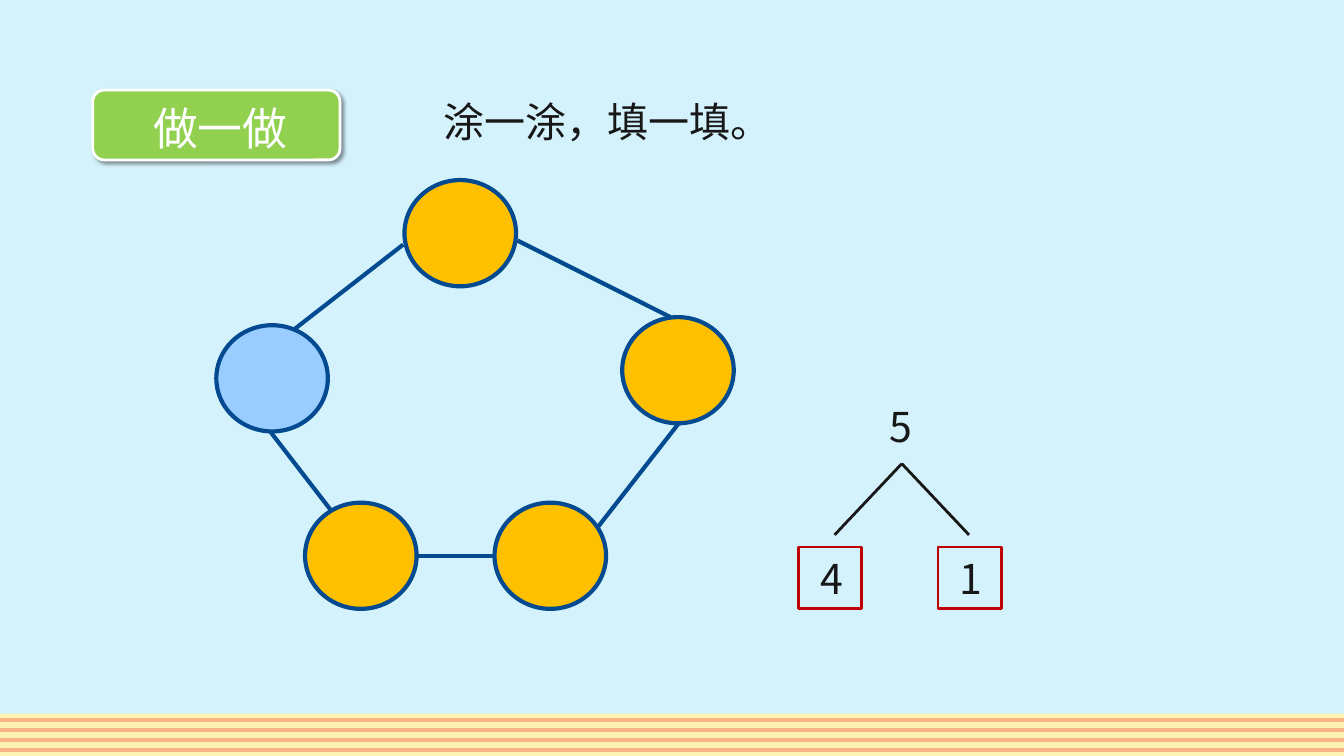
from typing import NamedTuple, Optional

from lxml.etree import SubElement
from pptx import Presentation
from pptx.dml.color import RGBColor
from pptx.enum.shapes import MSO_CONNECTOR, MSO_SHAPE
from pptx.enum.text import MSO_ANCHOR, PP_ALIGN
from pptx.oxml.ns import qn
from pptx.util import Inches, Pt

SKY = RGBColor(0xD4, 0xF2, 0xFC)
CREAM = RGBColor(0xFC, 0xF3, 0xB2)
PEACH = RGBColor(0xFB, 0xB4, 0x88)
NAVY = RGBColor(0x03, 0x4A, 0x90)
AMBER = RGBColor(0xFF, 0xC0, 0x00)
BLUE = RGBColor(0x99, 0xCC, 0xFF)
INK = RGBColor(0x18, 0x17, 0x17)
RED = RGBColor(0xC0, 0x00, 0x00)
GREEN = RGBColor(0x92, 0xD0, 0x50)
WHITE = RGBColor(0xFF, 0xFF, 0xFF)
FONT = "Noto Sans CJK SC"

prs = Presentation()
prs.slide_width = Inches(10)
prs.slide_height = prs.slide_width * 9 // 16
COLS = 100
ROWS = COLS * 9 / 16
CELL = prs.slide_width / COLS


class Box(NamedTuple):
    col: float
    row: float
    cols: float
    rows: float


class Line(NamedTuple):
    col1: float
    row1: float
    col2: float
    row2: float


class Bead(NamedTuple):
    col: float
    row: float
    fill: RGBColor = AMBER


class Digit(NamedTuple):
    text: str
    col: float
    row: float


def grid(*cells: float) -> list[int]:
    return [round(c * CELL) for c in cells]


def add_shape(slide, kind: MSO_SHAPE, box: Box, fill: Optional[RGBColor] = None,
              line: Optional[RGBColor] = None, width: float = 1.5):
    sp = slide.shapes.add_shape(kind, *grid(*box))
    sp.shadow.inherit = False
    if fill is None:
        sp.fill.background()
    else:
        sp.fill.solid()
        sp.fill.fore_color.rgb = fill
    if line is None:
        sp.line.fill.background()
    else:
        sp.line.color.rgb = line
        sp.line.width = Pt(width)
    return sp


def add_line(slide, line: Line, color: RGBColor, width: float) -> None:
    cxn = slide.shapes.add_connector(MSO_CONNECTOR.STRAIGHT, *grid(*line))
    cxn.line.color.rgb = color
    cxn.line.width = Pt(width)
    SubElement(cxn._element.spPr, qn("a:effectLst"))


def set_text(sp, text: str, size: float, color: RGBColor, wrap: bool = False,
             spacing: float = 1.0) -> None:
    tf = sp.text_frame
    tf.text = text
    tf.word_wrap = wrap
    tf.vertical_anchor = MSO_ANCHOR.TOP
    p = tf.paragraphs[0]
    p.alignment = PP_ALIGN.CENTER
    p.line_spacing = spacing
    p.font.size = Pt(size)
    p.font.color.rgb = color
    p.font.name = FONT
    SubElement(p._p.pPr.find(qn("a:defRPr")), qn("a:ea"), typeface=FONT)


def add_text(slide, box: Box, text: str, size: float, color: RGBColor, **kw) -> None:
    set_text(slide.shapes.add_textbox(*grid(*box)), text, size, color, **kw)


def add_shadow(sp) -> None:
    effects = sp._element.spPr.find(qn("a:effectLst"))
    shadow = SubElement(effects, qn("a:outerShdw"), blurRad=str(Pt(2)),
                        dist=str(Pt(2)), dir="2700000", algn="tl", rotWithShape="0")
    black = SubElement(shadow, qn("a:srgbClr"), val="000000")
    SubElement(black, qn("a:alpha"), val="40000")


def draw_backdrop(slide) -> None:
    add_shape(slide, MSO_SHAPE.RECTANGLE, Box(0, 0, COLS, ROWS), SKY)
    add_shape(slide, MSO_SHAPE.RECTANGLE, Box(0, 53.1, COLS, ROWS - 53.1), CREAM)
    for i in range(4):
        row = 53.6 + i * 0.73
        add_line(slide, Line(0, row, COLS, row), PEACH, 2.25)


def draw_ring(slide) -> None:
    links = [Line(30, 18.2, 21.9, 24.5), Line(20.1, 32.1, 24.8, 38.2),
             Line(31, 41.4, 36.8, 41.4), Line(44.5, 39.2, 50.5, 31.5),
             Line(38.5, 17.9, 49.9, 23.6)]
    beads = [Bead(30.1, 13.4), Bead(46.3, 23.6), Bead(36.8, 37.4),
             Bead(22.7, 37.4), Bead(16.1, 24.2, BLUE)]
    for link in links:
        add_line(slide, link, NAVY, 2.25)
    for b in beads:
        add_shape(slide, MSO_SHAPE.OVAL, Box(b.col, b.row, 8.3, 7.9), b.fill, NAVY, 2.25)


def draw_number_bond(slide) -> None:
    for d in [Digit("4", 60.1, 40.7), Digit("1", 70.4, 40.7), Digit("5", 65.2, 29.4)]:
        add_text(slide, Box(d.col, d.row, 3.6, 4.7), d.text, 22, INK)
    for col in (59.4, 69.8):
        add_shape(slide, MSO_SHAPE.RECTANGLE, Box(col, 40.7, 4.7, 4.6), line=RED)
    for col in (62.1, 72.1):
        add_line(slide, Line(67.1, 34.5, col, 39.8), INK, 1.5)


def draw_heading(slide) -> None:
    title = slide.shapes.title
    title.left, title.top, title.width, title.height = grid(31.8, 6.7, 26.8, 4.7)
    set_text(title, "涂一涂，填一填。", 22, INK)
    slide.shapes._spTree.append(title._element)
    badge = add_shape(slide, MSO_SHAPE.ROUNDED_RECTANGLE, Box(6.9, 6.7, 18.4, 5.2),
                      GREEN, WHITE)
    add_shadow(badge)
    add_text(slide, Box(8.4, 6.8, 16, 4.8), "做一做", 24, WHITE, wrap=True, spacing=1.05)


def main() -> None:
    slide = prs.slides.add_slide(prs.slide_layouts[5])
    draw_backdrop(slide)
    draw_ring(slide)
    draw_number_bond(slide)
    draw_heading(slide)
    prs.save("out.pptx")


if __name__ == "__main__":
    main()
